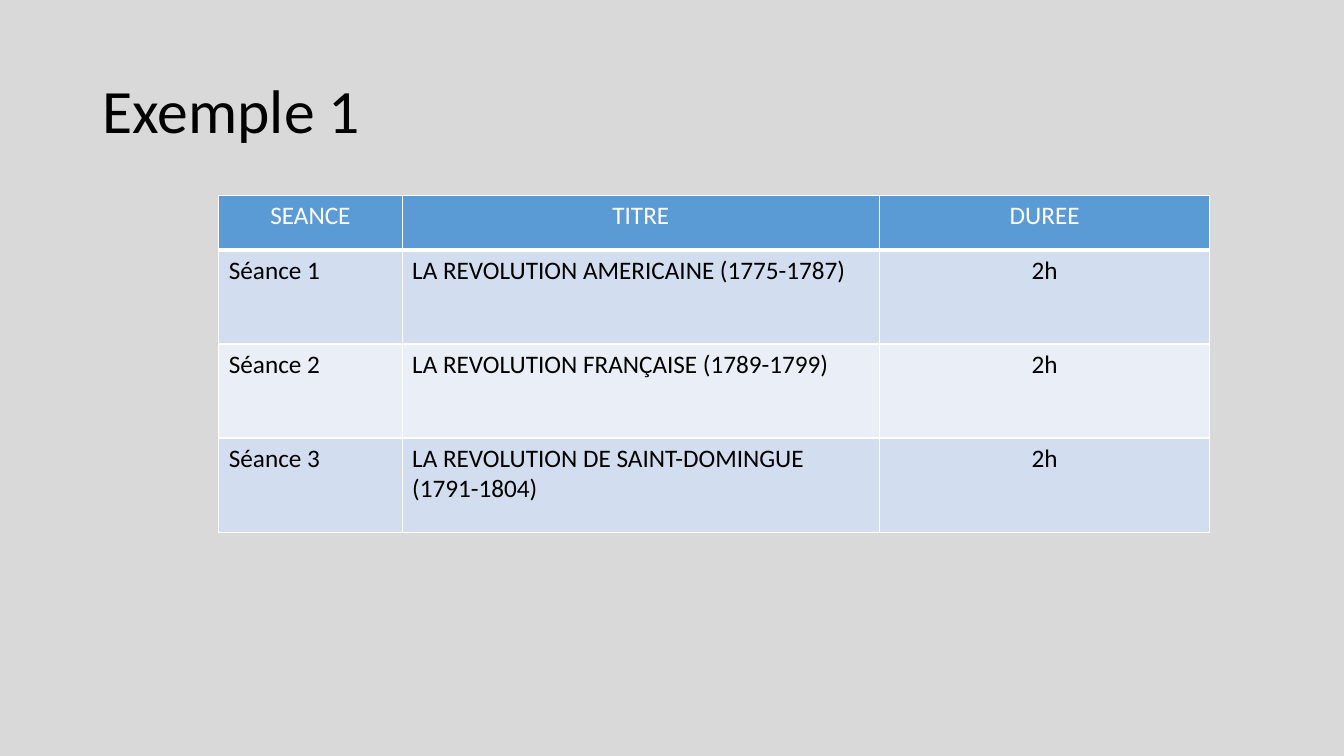
from lxml import etree
from pptx import Presentation, util as u
from pptx.dml.color import RGBColor
from pptx.enum import text
from pptx.oxml.ns import qn

PX = 9144
FONT = "Calibri"
COLOURS = {
    "background": "D9D9D9",
    "ink": "000000",
    "white": "FFFFFF",
    "header": "5B9BD5",
    "odd": "D2DEEF",
    "even": "EAEFF7",
}
HEADINGS = ("SEANCE", "TITRE", "DUREE")
SESSIONS = (
    ("Séance 1", "LA REVOLUTION AMERICAINE (1775-1787)", "2h"),
    ("Séance 2", "LA REVOLUTION FRANÇAISE (1789-1799)", "2h"),
    ("Séance 3", "LA REVOLUTION DE SAINT-DOMINGUE (1791-1804)", "2h"),
)
COLUMN_WIDTHS = (182, 474, 328)
HEADER_HEIGHT = 54


def px(length):
    """Turn pixels into EMU."""
    return u.Emu(round(length * PX))


def colour(name):
    """Look up a named colour."""
    return RGBColor.from_string(COLOURS[name])


def write(frame, wording, size=18, ink="ink", centred=False, line_spacing=None):
    """Put one formatted paragraph in a text frame."""
    paragraph = frame.paragraphs[0]
    paragraph.alignment = text.PP_ALIGN.CENTER if centred else text.PP_ALIGN.LEFT
    paragraph.line_spacing = line_spacing
    run = paragraph.add_run()
    run.text = wording
    run.font.name = FONT
    run.font.size = u.Pt(size)
    run.font.bold = False
    run.font.color.rgb = colour(ink)


def add_borders(cell, top=1, bottom=1):
    """Draw white rules around a cell, with widths in points."""
    properties = cell._tc.get_or_add_tcPr()
    sides = (("lnL", 1), ("lnR", 1), ("lnT", top), ("lnB", bottom))
    for position, (side, width) in enumerate(sides):
        rule = etree.Element(qn(f"a:{side}"), w=str(u.Pt(width)))
        fill = etree.SubElement(rule, qn("a:solidFill"))
        etree.SubElement(fill, qn("a:srgbClr"), val=COLOURS["white"])
        properties.insert(position, rule)


def add_title(slide, left, top, width, height):
    """Place the slide title in its box."""
    title = slide.shapes.add_textbox(px(left), px(top), px(width), px(height))
    frame = title.text_frame
    frame.word_wrap = True
    frame.vertical_anchor = text.MSO_ANCHOR.MIDDLE
    write(frame, "Exemple 1", size=44, line_spacing=0.9)


def add_schedule(slide, left, top, width, height):
    """Place the table of sessions in its box."""
    lines = (HEADINGS, *SESSIONS)
    schedule = slide.shapes.add_table(
        len(lines), len(HEADINGS), px(left), px(top), px(width), px(height)
    ).table
    for column, share in zip(schedule.columns, COLUMN_WIDTHS):
        column.width = px(width * share / sum(COLUMN_WIDTHS))
    session_height = (height - HEADER_HEIGHT) / len(SESSIONS)
    for r, line in enumerate(lines):
        is_header = r == 0
        schedule.rows[r].height = px(HEADER_HEIGHT if is_header else session_height)
        band = "header" if is_header else "odd" if r % 2 else "even"
        for c, wording in enumerate(line):
            cell = schedule.cell(r, c)
            cell.fill.solid()
            cell.fill.fore_color.rgb = colour(band)
            add_borders(cell, top=3 if r == 1 else 1, bottom=3 if is_header else 1)
            write(
                cell.text_frame,
                wording,
                ink="white" if is_header else "ink",
                centred=is_header or c == len(HEADINGS) - 1,
            )


def main():
    """Build and save the slide."""
    deck = Presentation()
    deck.slide_width, deck.slide_height = px(1333), px(750)
    slide = deck.slides.add_slide(deck.slide_layouts[6])
    slide.background.fill.solid()
    slide.background.fill.fore_color.rgb = colour("background")
    add_title(slide, 92, 40, 1150, 145)
    add_schedule(slide, 217, 194, 983, 334)
    deck.save("out.pptx")


if __name__ == "__main__":
    main()
